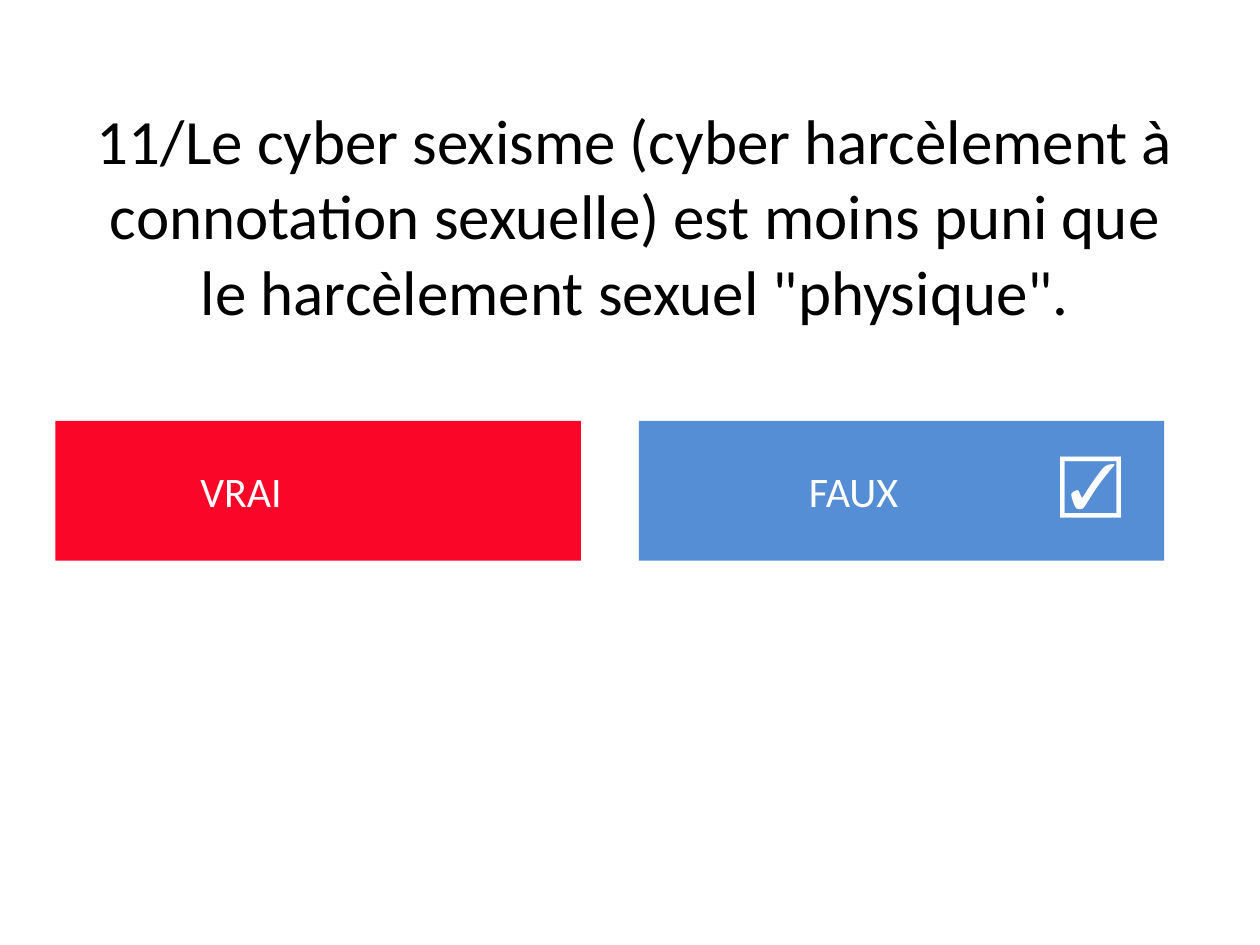
from dataclasses import dataclass

from pptx import Presentation
from pptx.dml.color import RGBColor
from pptx.enum.shapes import MSO_SHAPE
from pptx.enum.text import MSO_ANCHOR, PP_ALIGN
from pptx.slide import Slide
from pptx.text.text import TextFrame
from pptx.util import Inches, Pt

WHITE = RGBColor(0xFF, 0xFF, 0xFF)
BLACK = RGBColor(0x00, 0x00, 0x00)
RED = RGBColor(0xFA, 0x06, 0x29)
BLUE = RGBColor(0x55, 0x8E, 0xD5)

FONT = "Calibri"
QUESTION = (
    "11/Le cyber sexisme (cyber harcèlement à connotation sexuelle) "
    "est moins puni que le harcèlement sexuel \"physique\"."
)
ANSWER_TOP, ANSWER_WIDTH, ANSWER_HEIGHT = 3.34, 4.17, 1.11


@dataclass(frozen=True)
class Answer:
    label: str
    left: float
    text_inset: float
    color: RGBColor


ANSWERS = (
    Answer("VRAI", 0.44, 1.15, RED),
    Answer("FAUX", 5.07, 1.35, BLUE),
)


def write(frame: TextFrame, text: str, size: int, color: RGBColor,
          align: PP_ALIGN, anchor: MSO_ANCHOR) -> None:
    frame.text = text
    frame.word_wrap = True
    frame.vertical_anchor = anchor
    para = frame.paragraphs[0]
    para.alignment = align
    font = para.runs[0].font
    font.name = FONT
    font.size = Pt(size)
    font.color.rgb = color


def add_question(page: Slide) -> None:
    title = page.shapes.title
    title.left, title.top = Inches(0.59), Inches(0.76)
    title.width, title.height = Inches(8.9), Inches(1.89)
    title.fill.solid()
    title.fill.fore_color.rgb = WHITE
    write(title.text_frame, QUESTION, 36, BLACK, PP_ALIGN.CENTER, MSO_ANCHOR.MIDDLE)


def add_answer(page: Slide, answer: Answer) -> None:
    box = page.shapes.add_shape(
        MSO_SHAPE.RECTANGLE, Inches(answer.left), Inches(ANSWER_TOP),
        Inches(ANSWER_WIDTH), Inches(ANSWER_HEIGHT))
    box.shadow.inherit = False
    box.fill.solid()
    box.fill.fore_color.rgb = answer.color
    box.line.fill.background()
    box.text_frame.margin_left = Inches(answer.text_inset)
    write(box.text_frame, answer.label, 24, WHITE, PP_ALIGN.LEFT, MSO_ANCHOR.MIDDLE)


def add_check_mark(page: Slide) -> None:
    box = page.shapes.add_textbox(Inches(8.31), Inches(3.46), Inches(0.39), Inches(0.71))
    write(box.text_frame, "☑", 36, WHITE, PP_ALIGN.LEFT, MSO_ANCHOR.TOP)


def main() -> None:
    deck = Presentation()
    deck.slide_width, deck.slide_height = Inches(10), Inches(7.5)
    page = deck.slides.add_slide(deck.slide_layouts[0])
    subtitle = page.placeholders[1].element
    subtitle.getparent().remove(subtitle)
    add_question(page)
    for answer in ANSWERS:
        add_answer(page, answer)
    add_check_mark(page)
    deck.save("out.pptx")


if __name__ == "__main__":
    main()
